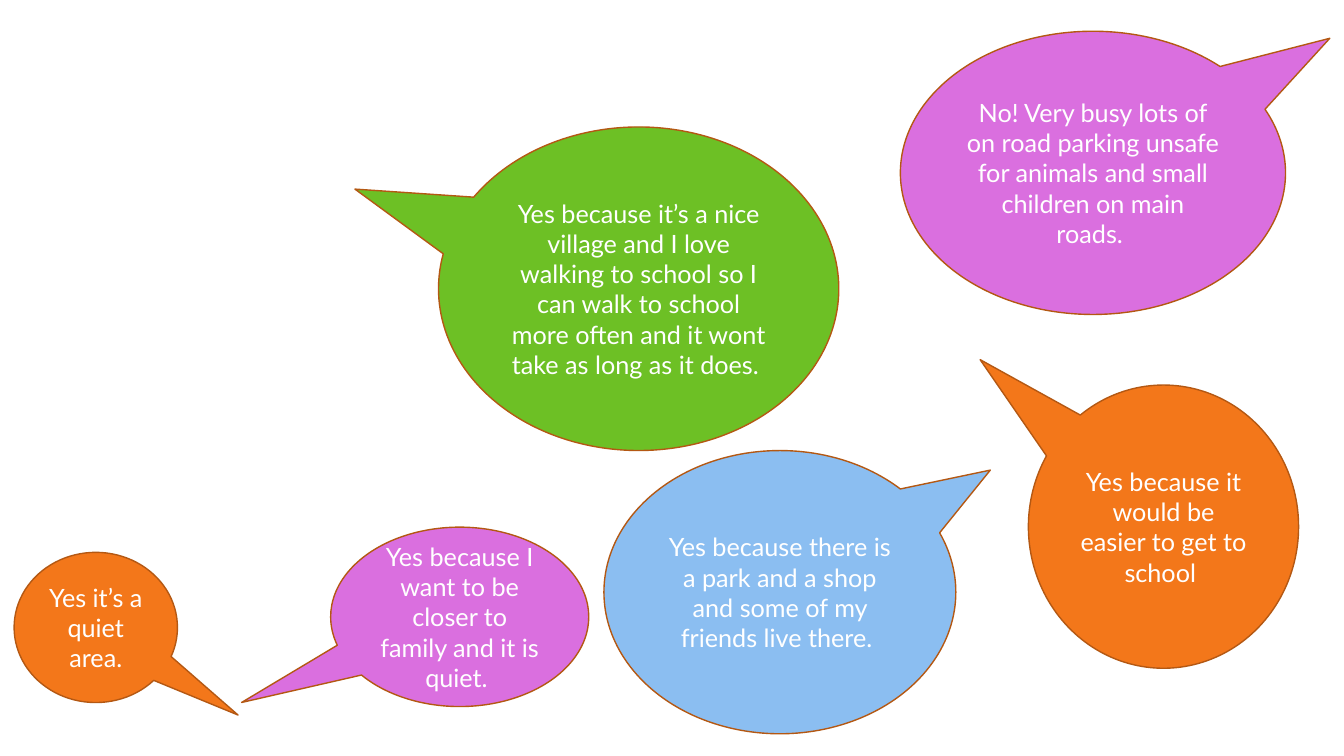
from pptx import Presentation
from pptx.dml.color import RGBColor
from pptx.enum.shapes import MSO_SHAPE as Shape
from pptx.enum.text import MSO_ANCHOR as Anchor, PP_ALIGN as Align
from pptx.util import Pt

PX = 9144
FONT = "Lato"
WHITE, EDGE = "FFFFFF", "B45813"
PINK, GREEN, ORANGE, BLUE = "DA6FDF", "6DC025", "F3771A", "8BBEF1"

BUBBLES = [
    ((893, 31, 382, 281), (0.615, -0.475), PINK,
     "No! Very busy lots of on road parking unsafe for animals "
     "and small children on main roads. "),
    ((435, 126, 397, 321), (-0.709, -0.308), GREEN,
     "Yes because it’s a nice village and I love walking to school "
     "so I can walk to school more often and it wont take as long as it does. "),
    ((1020, 382, 268, 281), (-0.679, -0.59), ORANGE,
     "Yes because it would be easier to get to school "),
    ((599, 447, 349, 281), (0.598, -0.431), BLUE,
     "Yes because there is a park and a shop and some of my friends live there. "),
    ((328, 523, 256, 178), (-0.845, 0.477), PINK,
     "Yes because I want to be closer to family and it is quiet. "),
    ((14, 548, 162, 149), (0.871, 0.583), ORANGE,
     "Yes it’s a quiet area."),
]


def color(code):
    return RGBColor.from_string(code)


def bubble(slide, box, tip, fill, words):
    shape = slide.shapes.add_shape(
        Shape.OVAL_CALLOUT, *(side * PX for side in box))
    shape.adjustments[0], shape.adjustments[1] = tip
    shape.shadow.inherit = False
    shape.fill.solid()
    shape.fill.fore_color.rgb = color(fill)
    shape.line.color.rgb = color(EDGE)
    shape.line.width = Pt(1)
    frame = shape.text_frame
    frame.word_wrap = True
    frame.vertical_anchor = Anchor.MIDDLE
    para = frame.paragraphs[0]
    para.text = words
    para.alignment = Align.CENTER
    para.font.name = FONT
    para.font.size = Pt(18)
    para.font.color.rgb = color(WHITE)


def main():
    deck = Presentation()
    deck.slide_width, deck.slide_height = 1333 * PX, 750 * PX
    slide = deck.slides.add_slide(deck.slide_layouts[6])
    for item in BUBBLES:
        bubble(slide, *item)
    deck.save("out.pptx")


if __name__ == "__main__":
    main()
